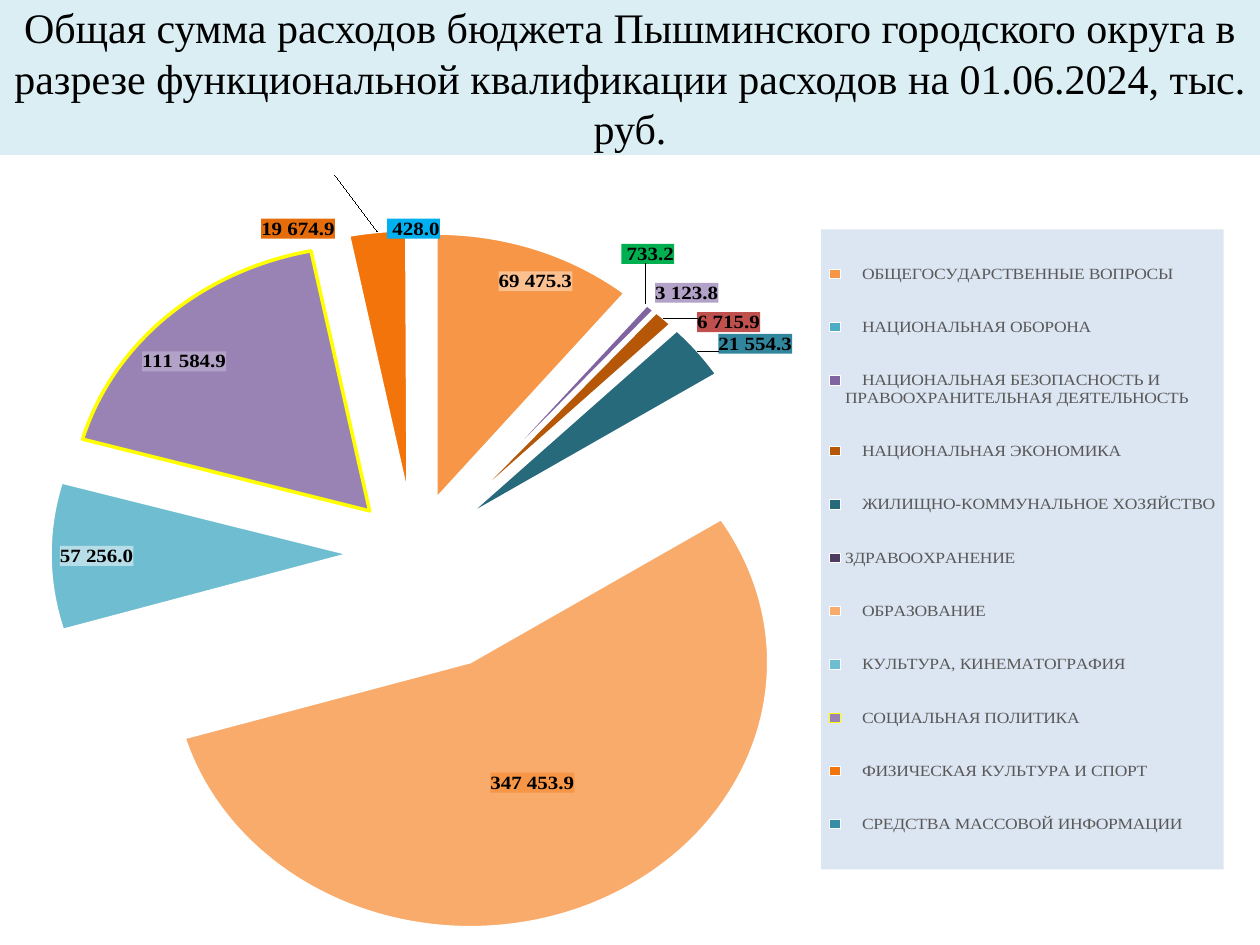
from pptx import Presentation
from pptx.chart.data import CategoryChartData as Data
from pptx.dml.color import RGBColor as RGB
from pptx.enum.chart import XL_CHART_TYPE as Kind, XL_LEGEND_POSITION as Side
from pptx.enum.shapes import MSO_SHAPE as Shape
from pptx.enum.text import MSO_ANCHOR as Anchor, PP_ALIGN as Align
from pptx.oxml import parse_xml
from pptx.oxml.ns import nsdecls, qn
from pptx.util import Pt

SERIF = "Times New Roman"
BLACK = RGB(0, 0, 0)
WHITE = RGB(255, 255, 255)
GREY = RGB(0x59, 0x59, 0x59)
YELLOW = RGB(255, 255, 0)
BAND = RGB(0xDB, 0xEE, 0xF4)
PANEL = RGB(0xDC, 0xE6, 0xF2)

TITLE = ("Общая сумма расходов бюджета Пышминского городского округа в разрезе "
         "функциональной квалификации расходов на 01.06.2024, тыс. руб.")
PAD = " " * 4
FORMAT = r"#\ ##0.0"
SCHOOL, SOCIAL = 6, 8

# name, value, slice colour, label fill, label place, label shift in % of the chart
ROWS = [
    (PAD + "ОБЩЕГОСУДАРСТВЕННЫЕ ВОПРОСЫ", 69475.3, "F79646", "FAC090", "bestFit", None),
    (PAD + "НАЦИОНАЛЬНАЯ ОБОРОНА", 733.2, "4BACC6", "00B050", "outEnd", (-2.3, -5.2)),
    (PAD + "НАЦИОНАЛЬНАЯ БЕЗОПАСНОСТЬ И ПРАВООХРАНИТЕЛЬНАЯ ДЕЯТЕЛЬНОСТЬ",
     3123.8, "8064A2", "B3A2C7", "outEnd", None),
    (PAD + "НАЦИОНАЛЬНАЯ ЭКОНОМИКА", 6715.9, "B65708", "C0504D", "outEnd", (2.3, 2.8)),
    (PAD + "ЖИЛИЩНО-КОММУНАЛЬНОЕ ХОЗЯЙСТВО", 21554.3, "276A7C", "31859C", "outEnd",
     (1.2, 1)),
    ("ЗДРАВООХРАНЕНИЕ", 0, "4D3B62", None, None, None),
    (PAD + "ОБРАЗОВАНИЕ", 347453.9, "F9AB6B", "F79646", "ctr", None),
    (PAD + "КУЛЬТУРА, КИНЕМАТОГРАФИЯ", 57256, "6FBDD1", "B7DEE8", "bestFit", None),
    (PAD + "СОЦИАЛЬНАЯ ПОЛИТИКА", 111584.9, "9983B5", "B3A2C7", "bestFit", None),
    (PAD + "ФИЗИЧЕСКАЯ КУЛЬТУРА И СПОРТ", 19674.9, "F3740B", "E46C0A", "outEnd",
     (-3.4, -7.5)),
    (PAD + "СРЕДСТВА МАССОВОЙ ИНФОРМАЦИИ", 428, "358EA6", "00B0F0", "outEnd", None),
]


def style(font, size, color, bold=False):
    font.name, font.size, font.bold = SERIF, Pt(size), bold
    font.color.rgb = color


def add_title(slide):
    box = slide.shapes.add_shape(Shape.RECTANGLE, 0, 0, Pt(720), Pt(88.56))
    box.shadow.inherit = False
    box.fill.solid()
    box.fill.fore_color.rgb = BAND
    box.line.fill.background()
    frame = box.text_frame
    frame.word_wrap = True
    frame.vertical_anchor = Anchor.MIDDLE
    frame.text = TITLE
    para = frame.paragraphs[0]
    para.alignment = Align.CENTER
    style(para.runs[0].font, 24, BLACK)


def layout(x, y, w, h, inner=False):
    """Manual layout in percent of the chart."""
    target = '<c:layoutTarget val="inner"/>' if inner else ""
    return parse_xml(
        f'<c:layout {nsdecls("c")}><c:manualLayout>{target}'
        '<c:xMode val="edge"/><c:yMode val="edge"/>'
        f'<c:x val="{x / 100}"/><c:y val="{y / 100}"/>'
        f'<c:w val="{w / 100}"/><c:h val="{h / 100}"/>'
        '</c:manualLayout></c:layout>')


def label(idx, fill, place, shift):
    """Data label with its own fill; no fill means no label."""
    head = f'<c:dLbl {nsdecls("c", "a")}><c:idx val="{idx}"/>'
    if fill is None:
        return parse_xml(head + '<c:delete val="1"/></c:dLbl>')
    move = ""
    if shift:
        move = ('<c:layout><c:manualLayout>'
                f'<c:x val="{shift[0] / 100}"/><c:y val="{shift[1] / 100}"/>'
                '</c:manualLayout></c:layout>')
    shown = "".join(
        f'<c:show{part} val="{int(part == "Val")}"/>'
        for part in ("LegendKey", "Val", "CatName", "SerName", "Percent", "BubbleSize"))
    return parse_xml(
        f'{head}{move}<c:numFmt formatCode="{FORMAT}" sourceLinked="0"/>'
        f'<c:spPr><a:solidFill><a:srgbClr val="{fill}"/></a:solidFill></c:spPr>'
        '<c:txPr><a:bodyPr/><a:p><a:pPr><a:defRPr sz="1200" b="1">'
        f'<a:solidFill><a:srgbClr val="{BLACK}"/></a:solidFill>'
        f'<a:latin typeface="{SERIF}"/></a:defRPr></a:pPr></a:p></c:txPr>'
        f'<c:dLblPos val="{place}"/>{shown}</c:dLbl>')


def burst(point, share):
    """Pull one slice out by a percentage of the radius."""
    node = parse_xml(f'<c:explosion {nsdecls("c")} val="{share}"/>')
    point.format.fill._xPr.addprevious(node)


def add_slices(series):
    for i, row in enumerate(ROWS):
        point = series.points[i]
        look = point.format
        look.fill.solid()
        look.fill.fore_color.rgb = RGB.from_string(row[2])
        look.line.color.rgb = YELLOW if i == SOCIAL else WHITE
        look.line.width = Pt(2 if i == SOCIAL else 1.5)
        burst(point, 45 if i == SCHOOL else 22)


def add_labels(series):
    labels = series.data_labels
    labels.show_value = True
    labels.number_format = FORMAT
    labels.number_format_is_linked = False
    style(labels.font, 12, BLACK, True)
    for i, row in enumerate(ROWS):
        labels._element.insert(i, label(i, *row[3:]))


def add_legend(chart):
    chart.has_legend = True
    legend = chart.legend
    legend.position = Side.RIGHT
    legend.include_in_layout = False
    style(legend.font, 10, GREY)
    node = legend._element
    for old in node.findall(qn("c:layout")):
        node.remove(old)
    node.find(qn("c:legendPos")).addnext(layout(66.5, 1.6, 32.6, 95.5))
    node.find(qn("c:txPr")).addprevious(parse_xml(
        f'<c:spPr {nsdecls("c", "a")}><a:solidFill><a:srgbClr val="{PANEL}"/>'
        '</a:solidFill></c:spPr>'))


def add_pie(slide):
    data = Data(number_format=FORMAT)
    data.categories = [row[0] for row in ROWS]
    data.add_series("Series 1", [row[1] for row in ROWS])
    chart = slide.shapes.add_chart(
        Kind.PIE, 0, Pt(100), Pt(705.6), Pt(430.56), data).chart
    chart.has_title = False
    chart.font.name, chart.font.size = "Calibri", Pt(10)
    chart.font.color.rgb = BLACK
    plot = chart.plots[0]
    plot.vary_by_categories = True
    add_slices(plot.series[0])
    add_labels(plot.series[0])
    add_legend(chart)
    area = chart._chartSpace.find(f'{qn("c:chart")}/{qn("c:plotArea")}')
    for old in area.findall(qn("c:layout")):
        area.remove(old)
    area.insert(0, layout(9.4, 10.4, 48.3, 79.2, True))


def main():
    deck = Presentation()
    deck.slide_width, deck.slide_height = Pt(720), Pt(540)
    slide = deck.slides.add_slide(deck.slide_layouts[6])
    add_title(slide)
    add_pie(slide)
    deck.save("out.pptx")


if __name__ == "__main__":
    main()
